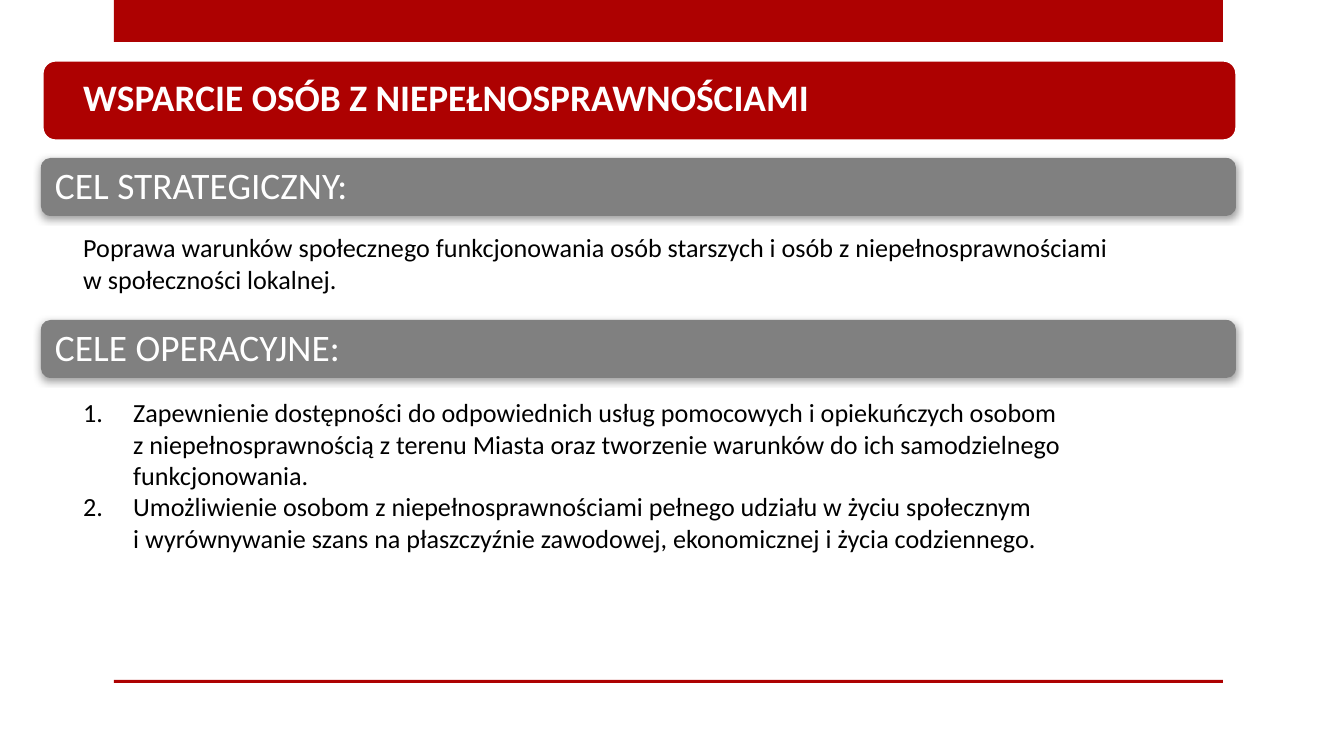
import pptx
import pptx.dml.color
import pptx.enum.shapes
import pptx.enum.text
import pptx.oxml
import pptx.oxml.ns
import pptx.util

PX = 914400 / 134.4
COLORS = {"red": "AD0101", "gray": "808080", "white": "FFFFFF", "black": "000000"}
SHAPES = pptx.enum.shapes.MSO_SHAPE
NS = pptx.oxml.ns.nsdecls("a")

deck = pptx.Presentation()
deck.slide_width = round(1344 * PX)
deck.slide_height = round(756 * PX)
slide = deck.slides.add_slide(deck.slide_layouts[6])


def add_bar(kind, box, color):
    bar = slide.shapes.add_shape(kind, *[round(v * PX) for v in box])
    bar.shadow.inherit = False
    bar.fill.solid()
    bar.fill.fore_color.rgb = pptx.dml.color.RGBColor.from_string(COLORS[color])
    bar.line.fill.background()
    return bar


def add_text(box, paragraphs, size, color, bold=False):
    frame = slide.shapes.add_textbox(*[round(v * PX) for v in box]).text_frame
    frame.word_wrap = True
    for i, text in enumerate(paragraphs):
        paragraph = frame.add_paragraph() if i else frame.paragraphs[0]
        paragraph.text = text
        for run in paragraph.runs:
            run.font.name = "Calibri"
            run.font.size = pptx.util.Pt(size)
            run.font.bold = bold
            run.font.color.rgb = pptx.dml.color.RGBColor.from_string(COLORS[color])
    return frame


# Top band and bottom rule
for top, height in ((0, 42), (680, 3)):
    add_bar(SHAPES.RECTANGLE, (114, top, 1109, height), "red")

# Section headings with a soft shadow
for heading, top in (("CEL STRATEGICZNY:", 158), ("CELE OPERACYJNE:", 320)):
    bar = add_bar(SHAPES.ROUNDED_RECTANGLE, (41, top, 1195, 58), "gray")
    effects = bar._element.spPr.find(pptx.oxml.ns.qn("a:effectLst"))
    effects.append(pptx.oxml.parse_xml(
        f'<a:outerShdw {NS} blurRad="50800" dist="12700" dir="5280000" rotWithShape="0">'
        f'<a:srgbClr val="{COLORS["black"]}"><a:alpha val="40000"/></a:srgbClr></a:outerShdw>'))
    label = add_text((44, top + 3, 1188, 52), [heading], 20, "white")
    label.vertical_anchor = pptx.enum.text.MSO_ANCHOR.MIDDLE
    label.margin_left = label.margin_right = round(11 * PX)
    label.margin_top = label.margin_bottom = round(11 * PX)
    label.paragraphs[0].line_spacing = 0.9

# Strategic goal
add_text((70, 225, 1152, 76), [
    "Poprawa warunków społecznego funkcjonowania osób starszych i osób z niepełnosprawnościami \n"
    "w społeczności lokalnej.",
], 14, "black")

# Numbered operational goals
goals = add_text((70, 390, 1138, 172), [
    "Zapewnienie dostępności do odpowiednich usług pomocowych i opiekuńczych osobom \n"
    "z niepełnosprawnością z terenu Miasta oraz tworzenie warunków do ich samodzielnego funkcjonowania.",
    "Umożliwienie osobom z niepełnosprawnościami pełnego udziału w życiu społecznym \n"
    "i wyrównywanie szans na płaszczyźnie zawodowej, ekonomicznej i życia codziennego.",
], 14, "black")
for goal in goals.paragraphs:
    properties = goal._p.get_or_add_pPr()
    properties.set("marL", str(round(50 * PX)))
    properties.set("indent", str(round(-50 * PX)))
    properties.append(pptx.oxml.parse_xml(
        f'<a:buClr {NS}><a:srgbClr val="{COLORS["black"]}"/></a:buClr>'))
    properties.append(pptx.oxml.parse_xml(f'<a:buAutoNum {NS} type="arabicPeriod"/>'))

# Title
banner = add_bar(SHAPES.ROUNDED_RECTANGLE, (42, 60, 1195, 81), "red")
banner.line.color.rgb = pptx.dml.color.RGBColor.from_string(COLORS["white"])
banner.line.width = pptx.util.Pt(1.75)
title = add_text((70, 68, 763, 59), ["WSPARCIE OSÓB Z NIEPEŁNOSPRAWNOŚCIAMI"], 20, "white", bold=True)
title.word_wrap = False

deck.save("out.pptx")
